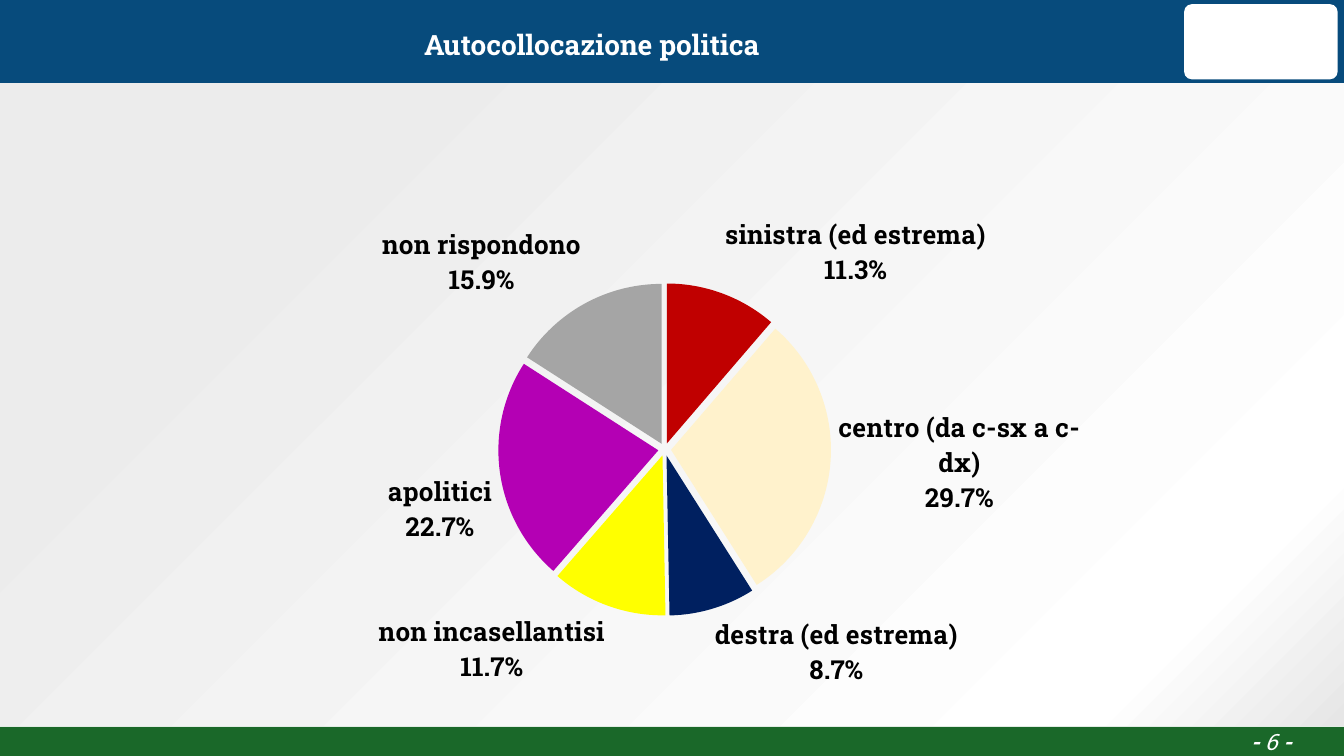
from lxml import etree
from pptx import Presentation
from pptx import util as u
from pptx.chart import data as chart_data
from pptx.dml.color import RGBColor
from pptx.enum import chart as chart_enum
from pptx.enum import shapes, text
from pptx.oxml import parse_xml
from pptx.oxml.ns import nsdecls, qn

WHITE = RGBColor(0xFF, 0xFF, 0xFF)
BLACK = RGBColor(0x00, 0x00, 0x00)
BLUE = RGBColor(0x07, 0x4B, 0x7C)
GREEN = RGBColor(0x1A, 0x68, 0x29)
GRADIENT = [(0, RGBColor(0xE6, 0xE6, 0xE6)), (13, WHITE), (82, RGBColor(0xEC, 0xEC, 0xEC))]
FONT = "Roboto Slab"

ANSWERS = [
    ("sinistra (ed estrema)", 0.113, RGBColor(0xC0, 0x00, 0x00)),
    ("centro (da c-sx a c-dx)", 0.297, RGBColor(0xFF, 0xF2, 0xCC)),
    ("destra (ed estrema)", 0.087, RGBColor(0x00, 0x20, 0x60)),
    ("non incasellantisi", 0.117, RGBColor(0xFF, 0xFF, 0x00)),
    ("apolitici", 0.227, RGBColor(0xB4, 0x00, 0xB4)),
    ("non rispondono", 0.159, RGBColor(0xA5, 0xA5, 0xA5)),
]


def set_values(target, values):
    """Set each named value as an attribute of the target."""
    for name, value in values.items():
        setattr(target, name, value)


def lengths(box):
    """Turn a box of centimetres into lengths."""
    return [u.Cm(value) for value in box]


def add_panel(slide, box, color, kind=shapes.MSO_SHAPE.RECTANGLE):
    """Add a plain filled panel without outline."""
    shape = slide.shapes.add_shape(kind, *lengths(box))
    shape.shadow.inherit = False
    shape.fill.solid()
    shape.fill.fore_color.rgb = color
    shape.line.fill.background()
    return shape


def add_line_of_text(slide, box, runs, size, margin, spacing=None):
    """Add one centred white line made of (wording, format) runs."""
    frame = slide.shapes.add_textbox(*lengths(box)).text_frame
    margins = {f"margin_{side}": u.Cm(margin) for side in ("left", "top", "right", "bottom")}
    set_values(frame, {"word_wrap": True, "vertical_anchor": text.MSO_ANCHOR.MIDDLE, **margins})
    paragraph = frame.paragraphs[0]
    set_values(paragraph, {"alignment": text.PP_ALIGN.CENTER, "line_spacing": spacing})
    for wording, values in runs:
        run = paragraph.add_run()
        run.text = wording
        set_values(run.font, {"name": FONT, "size": u.Pt(size), **values})
        run.font.color.rgb = WHITE


def add_background(slide, box):
    """Add the grey gradient that spreads from the lower right corner."""
    panel = add_panel(slide, box, WHITE)
    stops = "".join(
        f'<a:gs pos="{position * 1000}"><a:srgbClr val="{color}"/></a:gs>'
        for position, color in GRADIENT
    )
    gradient = parse_xml(
        f'<a:gradFill {nsdecls("a")} rotWithShape="1"><a:gsLst>{stops}</a:gsLst>'
        '<a:path path="circle"><a:fillToRect l="100000" t="100000"/></a:path>'
        '<a:tileRect r="-100000" b="-100000"/></a:gradFill>'
    )
    properties = panel.element.spPr
    properties.replace(properties.find(qn("a:solidFill")), gradient)


def add_header(slide, box):
    """Add the title band with its white badge at the right."""
    left, top, width, height = box
    add_panel(slide, box, BLUE)
    badge_box = (left + width - 3.02, top + 0.08, 2.9, height - 0.15)
    badge = add_panel(slide, badge_box, WHITE, shapes.MSO_SHAPE.ROUNDED_RECTANGLE)
    badge.adjustments[0] = 0.1
    title_box = (left + 0.18, top + 0.05, width - 3.38, height - 0.08)
    title = [("Autocollocazione politica", {"bold": True})]
    add_line_of_text(slide, title_box, title, 15, 0.13, u.Pt(20))


def add_footer(slide, box):
    """Add the green band with the page number."""
    left, top, width, height = box
    add_panel(slide, box, GREEN)
    number_box = (left + width - 2.69, top + 0.07, 2.62, 0.43)
    runs = [(wording, {"bold": bold, "italic": True})
            for wording, bold in (("- ", True), ("6", False), (" -", True))]
    add_line_of_text(slide, number_box, runs, 12, 0.1)


def place_plot(chart, **fractions):
    """Fix the inner plot area as fractions of the chart."""
    area = chart.plots[0]._element.getparent()
    for old in area.findall(qn("c:layout")):
        area.remove(old)
    layout = etree.Element(qn("c:layout"))
    manual = etree.SubElement(layout, qn("c:manualLayout"))
    settings = {"layoutTarget": "inner", "xMode": "edge", "yMode": "edge", **fractions}
    for tag, value in settings.items():
        etree.SubElement(manual, qn(f"c:{tag}")).set("val", str(value))
    area.insert(0, layout)


def add_pie(slide, box):
    """Add the exploded pie of answers with outside labels."""
    names, values, colors = zip(*ANSWERS)
    data = chart_data.CategoryChartData(number_format="0.0%")
    data.categories = names
    data.add_series("Series 1", values)
    chart = slide.shapes.add_chart(chart_enum.XL_CHART_TYPE.PIE, *lengths(box), data).chart
    set_values(chart, {"has_legend": False, "has_title": False})
    set_values(chart.font, {"name": "Calibri", "size": u.Pt(10)})
    chart.font.color.rgb = BLACK
    place_plot(chart, x=0.233, y=0.311, w=0.52, h=0.521)

    plot = chart.plots[0]
    plot.vary_by_categories = True
    series = plot.series[0]
    explosion = parse_xml(f'<c:explosion {nsdecls("c")} val="4"/>')
    series._element.find(qn("c:cat")).addprevious(explosion)
    for index, color in enumerate(colors):
        fill = series.points[index].format.fill
        fill.solid()
        fill.fore_color.rgb = color
        series.points[index].format.line.fill.background()

    labels = series.data_labels
    set_values(labels, {
        "show_category_name": True, "show_value": True, "show_percentage": False,
        "number_format": "0.0%", "number_format_is_linked": False,
        "position": chart_enum.XL_LABEL_POSITION.OUTSIDE_END,
    })
    set_values(labels.font, {"name": FONT, "size": u.Pt(14), "bold": True})
    labels.font.color.rgb = BLACK
    separator = parse_xml(f'<c:separator {nsdecls("c")}>\n</c:separator>')
    labels._element.find(qn("c:showBubbleSize")).addnext(separator)


def main():
    """Build and save the slide."""
    presentation = Presentation()
    set_values(presentation, {"slide_width": u.Cm(25.4), "slide_height": u.Cm(14.29)})
    slide = presentation.slides.add_slide(presentation.slide_layouts[6])
    add_background(slide, (0, 1.57, 25.4, 12.14))
    add_header(slide, (0, 0, 25.4, 1.57))
    add_footer(slide, (0, 13.74, 25.4, 0.55))
    add_pie(slide, (0.08, 1.6, 25.32, 12.07))
    presentation.save("out.pptx")


if __name__ == "__main__":
    main()
